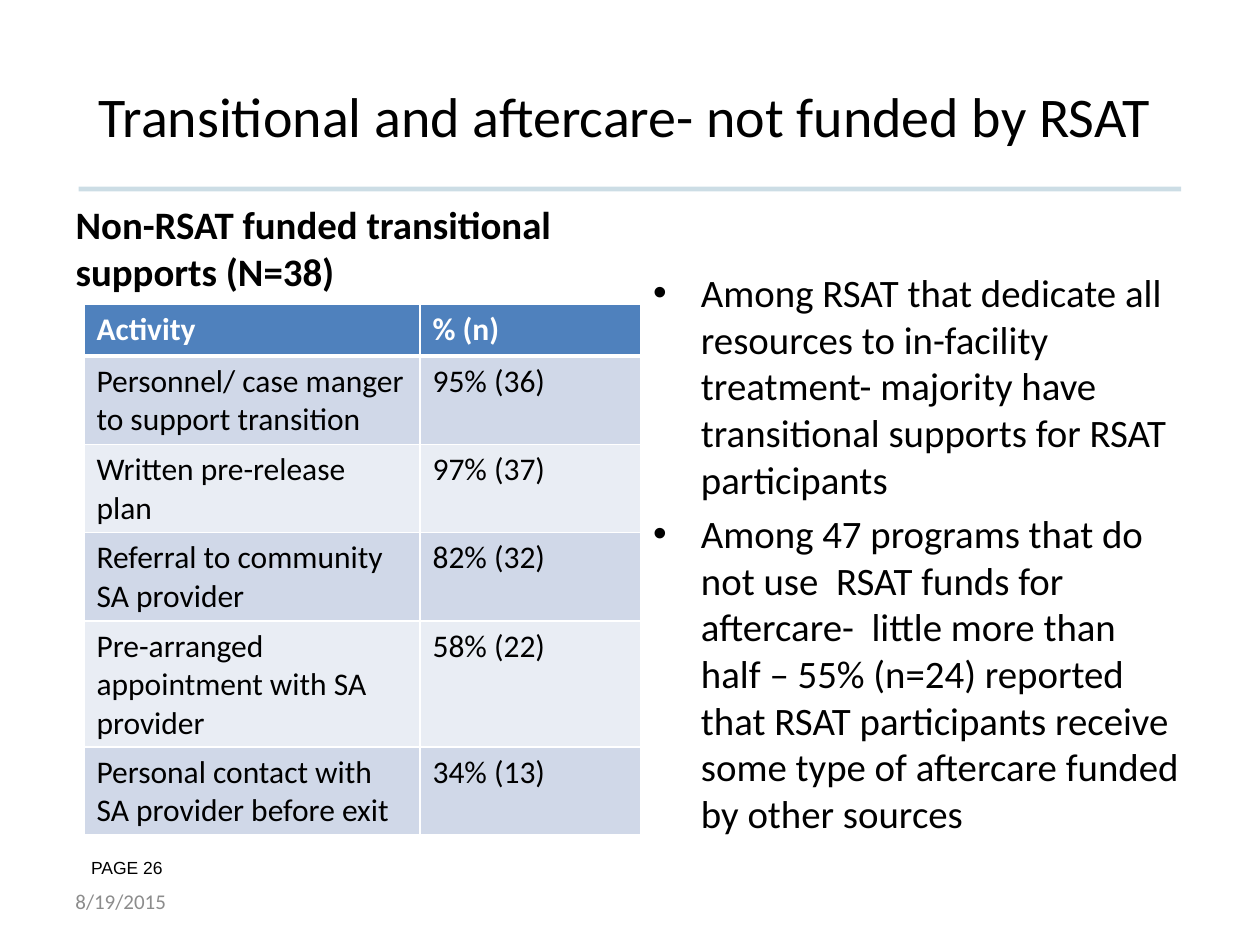
"""Build the slide on transitional and aftercare supports."""
import pptx
import pptx.dml.color
import pptx.enum.text
import pptx.oxml
import pptx.oxml.ns
import pptx.util
from lxml import etree

RGB = pptx.dml.color.RGBColor
BLACK, WHITE = RGB(0, 0, 0), RGB(255, 255, 255)
GRAY, TEAL = RGB(0x8C, 0x8C, 0x8C), RGB(0, 0x55, 0x81)
BLUE = RGB(0x4F, 0x81, 0xBD)
BANDS = RGB(0xD0, 0xD8, 0xE8), RGB(0xE9, 0xED, 0xF4)
ALIGN = pptx.enum.text.PP_ALIGN
ANCHOR = pptx.enum.text.MSO_ANCHOR
WIDTH, HEIGHT = pptx.util.Inches(10), pptx.util.Inches(7.5)
COLS = 120
UNIT = WIDTH / COLS

ROWS = [
    ("Activity", "% (n)"),
    ("Personnel/ case manger to support transition", "95% (36)"),
    ("Written pre-release plan", "97% (37)"),
    ("Referral to community SA provider", "82% (32)"),
    ("Pre-arranged appointment with SA provider", "58% (22)"),
    ("Personal contact with SA provider before exit", "34% (13)"),
]
POINTS = [
    "Among RSAT that dedicate all resources to in-facility treatment- "
    "majority have transitional supports for RSAT participants",
    "Among 47 programs that do not use  RSAT funds for aftercare-  little "
    "more than half – 55% (n=24) reported that RSAT participants receive "
    "some type of aftercare funded by other sources",
]


def grid(*spans):
    """Turn grid spans into slide lengths."""
    return [round(span * UNIT) for span in spans]


def place(shape, box):
    """Move a shape to a box on the grid."""
    shape.left, shape.top, shape.width, shape.height = grid(*box)


def child(node, tag, **attrs):
    """Add a drawing element with attributes below a node."""
    return etree.SubElement(node, pptx.oxml.ns.qn("a:" + tag), **attrs)


def write(frame, *texts, size=18, font="Calibri", color=BLACK, bold=False,
          align=ALIGN.LEFT, anchor=ANCHOR.TOP, before=0, after=0, bullet=None):
    """Fill a text frame with formatted paragraphs."""
    frame.word_wrap = True
    frame.vertical_anchor = anchor
    for i, text in enumerate(texts):
        para = frame.add_paragraph() if i else frame.paragraphs[0]
        para.alignment = align
        para.space_before = pptx.util.Pt(before if i else 0)
        para.space_after = pptx.util.Pt(after)
        if bullet:
            props = para._p.get_or_add_pPr()
            hang = pptx.util.Inches(0.38)
            props.set("marL", str(hang))
            props.set("indent", str(-hang))
            child(props, "buFont", typeface="Arial")
            child(props, "buChar", char=bullet)
        run = para.add_run()
        run.text = text
        run.font.name, run.font.size = font, pptx.util.Pt(size)
        run.font.bold, run.font.color.rgb = bold, color


def fill(holder, box, *texts, **form):
    """Place a placeholder and write its text."""
    place(holder, box)
    holder.text_frame.auto_size = pptx.enum.text.MSO_AUTO_SIZE.NONE
    write(holder.text_frame, *texts, **form)


def label(slide, box, text, **form):
    """Add a text box with one paragraph."""
    shape = slide.shapes.add_textbox(*grid(*box))
    write(shape.text_frame, text, **form)


def rule(slide, box):
    """Draw the pale line below the title."""
    x, y, w, h = box
    line = slide.shapes.add_connector(1, *grid(x, y, x + w, y + h))
    line.line.width = pptx.util.Pt(2.75)
    line.line.color.rgb = TEAL
    props = line._element.spPr
    tint = next(props.iter(pptx.oxml.ns.qn("a:srgbClr")))
    child(tint, "alpha", val="20000")
    child(props, "effectLst")


def edge(cell, **sides):
    """Give a cell white borders of the given point widths."""
    props = cell._tc.get_or_add_tcPr()
    for i, (side, width) in enumerate(sides.items()):
        line = child(props, "ln" + side, w=str(pptx.util.Pt(width)))
        child(child(line, "solidFill"), "srgbClr", val=str(WHITE))
        props.insert(i, line)


def table(slide, box):
    """Add the table of activities with banded rows."""
    shape = slide.shapes.add_table(len(ROWS), 2, *grid(*box))
    sheet = shape.table
    shares = 32 / 53, 21 / 53
    for col, share in zip(sheet.columns, shares):
        col.width = grid(box[2] * share)[0]
    for r, texts in enumerate(ROWS):
        head = r == 0
        sheet.rows[r].height = pptx.util.Inches(0.41)
        for c, text in enumerate(texts):
            cell = sheet.cell(r, c)
            write(cell.text_frame, text, bold=head,
                  color=WHITE if head else BLACK)
            cell.fill.solid()
            cell.fill.fore_color.rgb = BLUE if head else BANDS[(r - 1) % 2]
            edge(cell, L=1, R=1, T=3 if r == 1 else 1, B=3 if head else 1)
    shape.height = grid(box[3])[0]


def main():
    """Assemble and save the slide."""
    deck = pptx.Presentation()
    deck.slide_width, deck.slide_height = WIDTH, HEIGHT
    slide = deck.slides.add_slide(deck.slide_layouts[4])
    parts = {p.placeholder_format.idx: p for p in slide.placeholders}
    for key in (2, 3):
        parts[key]._element.getparent().remove(parts[key]._element)
    label(slide, (7.5, 81, 12.5, 6), "PAGE 26", size=10, font="Arial", after=6)
    rule(slide, (7.5, 18, 105, 0))
    fill(parts[0], (4, 3.5, 111, 15),
         "Transitional and aftercare- not funded by RSAT",
         size=32, align=ALIGN.CENTER, anchor=ANCHOR.MIDDLE)
    fill(parts[1], (6, 20.2, 53, 8.4),
         "Non-RSAT funded transitional supports (N=38)",
         size=22.2, bold=True, anchor=ANCHOR.BOTTOM)
    table(slide, (8, 29, 53, 50.5))
    fill(parts[4], (61, 25, 53, 55.5), *POINTS,
         size=22.2, before=4.4, bullet="•")
    label(slide, (6, 83.4, 28, 4.8), "8/19/2015",
          size=12, color=GRAY, anchor=ANCHOR.MIDDLE)
    deck.save("out.pptx")


if __name__ == "__main__":
    main()
